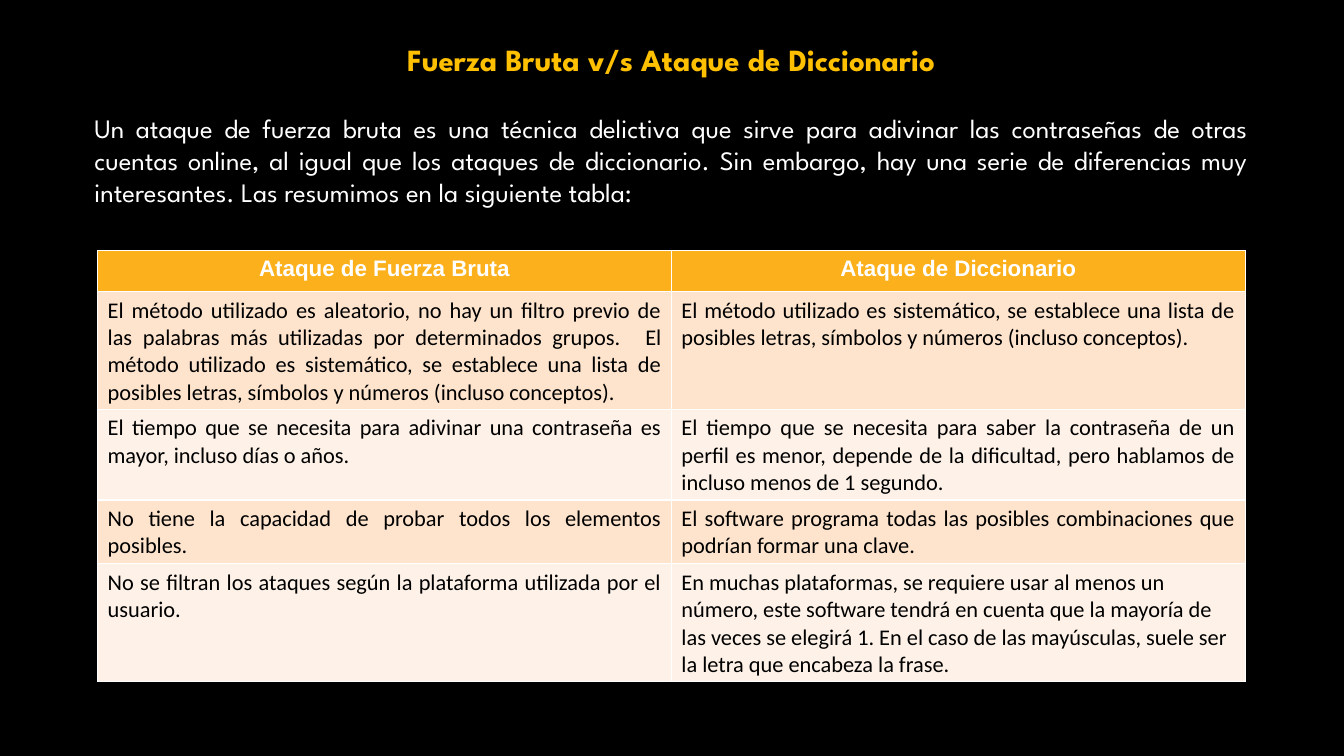
import pptx
import pptx.dml.color
import pptx.enum.text
import pptx.util

Cm = pptx.util.Cm
Pt = pptx.util.Pt
RGBColor = pptx.dml.color.RGBColor
ALIGN = pptx.enum.text.PP_ALIGN

BLACK = RGBColor(0x00, 0x00, 0x00)
WHITE = RGBColor(0xFF, 0xFF, 0xFF)
GOLD = RGBColor(0xFF, 0xC0, 0x00)
HEADER_ORANGE = RGBColor(0xFC, 0xB1, 0x1C)
ROW_TINTS = (RGBColor(0xFE, 0xE4, 0xCD), RGBColor(0xFE, 0xF2, 0xE8))

TITLE = "Fuerza Bruta v/s Ataque de Diccionario"
INTRO = (
    "Un ataque de fuerza bruta es una técnica delictiva que sirve para adivinar "
    "las contraseñas de otras cuentas online, al igual que los ataques de "
    "diccionario. Sin embargo, hay una serie de diferencias muy interesantes. "
    "Las resumimos en la siguiente tabla:"
)
SYSTEMATIC = (
    "El método utilizado es sistemático, se establece una lista de posibles "
    "letras, símbolos y números (incluso conceptos)."
)
HEADERS = ("Ataque de Fuerza Bruta", "Ataque de Diccionario")
DIFFERENCES = (
    (
        "El método utilizado es aleatorio, no hay un filtro previo de las palabras "
        "más utilizadas por determinados grupos.\t" + SYSTEMATIC,
        SYSTEMATIC,
    ),
    (
        "El tiempo que se necesita para adivinar una contraseña es mayor, incluso "
        "días o años.",
        "El tiempo que se necesita para saber la contraseña de un perfil es menor, "
        "depende de la dificultad, pero hablamos de incluso menos de 1 segundo.",
    ),
    (
        "No tiene la capacidad de probar todos los elementos posibles.",
        "El software programa todas las posibles combinaciones que podrían formar "
        "una clave.",
    ),
    (
        "No se filtran los ataques según la plataforma utilizada por el usuario.",
        "En muchas plataformas, se requiere usar al menos un número, este software "
        "tendrá en cuenta que la mayoría de las veces se elegirá 1. En el caso de "
        "las mayúsculas, suele ser la letra que encabeza la frase.",
    ),
)


def write(paragraph, text, typeface, size, color, align, bold=False):
    paragraph.text = text
    paragraph.alignment = align
    for run in paragraph.runs:
        run.font.name = typeface
        run.font.size = Pt(size)
        run.font.bold = bold
        run.font.color.rgb = color


def fill_cell(cell, tint, text, typeface, color, align, bold=False):
    cell.fill.solid()
    cell.fill.fore_color.rgb = tint
    write(cell.text_frame.paragraphs[0], text, typeface, 16, color, align, bold)


def add_heading(slide):
    heading = slide.shapes.add_textbox(Cm(2.13), Cm(0.89), Cm(29.57), Cm(7.14))
    frame = heading.text_frame
    frame.word_wrap = True
    write(frame.paragraphs[0], TITLE, "League Spartan", 22, GOLD, ALIGN.CENTER, True)
    intro = frame.add_paragraph()
    write(intro, INTRO, "League Spartan", 19, WHITE, ALIGN.JUSTIFY)
    intro.space_before = Pt(25)


def add_comparison(slide):
    """Add the table; its rows grow from a common minimum height to fit the text."""
    comparison = slide.shapes.add_table(
        len(DIFFERENCES) + 1, len(HEADERS), Cm(2.46), Cm(6.32), Cm(28.92), Cm(10.85)
    ).table
    for row in comparison.rows:
        row.height = Cm(1.03)
    for column, header in enumerate(HEADERS):
        fill_cell(comparison.cell(0, column), HEADER_ORANGE, header, "Arial", WHITE,
                  ALIGN.CENTER, True)
    for index, difference in enumerate(DIFFERENCES):
        for column, text in enumerate(difference):
            fill_cell(comparison.cell(index + 1, column), ROW_TINTS[index % 2], text,
                      "Calibri", BLACK, ALIGN.JUSTIFY)
    last_cell = comparison.cell(len(DIFFERENCES), len(HEADERS) - 1)
    last_cell.text_frame.paragraphs[0].alignment = ALIGN.LEFT


def main():
    deck = pptx.Presentation()
    deck.slide_width = Cm(33.87)
    deck.slide_height = Cm(19.05)
    slide = deck.slides.add_slide(deck.slide_layouts[6])
    slide.background.fill.solid()
    slide.background.fill.fore_color.rgb = BLACK
    add_heading(slide)
    add_comparison(slide)
    deck.save("out.pptx")


if __name__ == "__main__":
    main()
